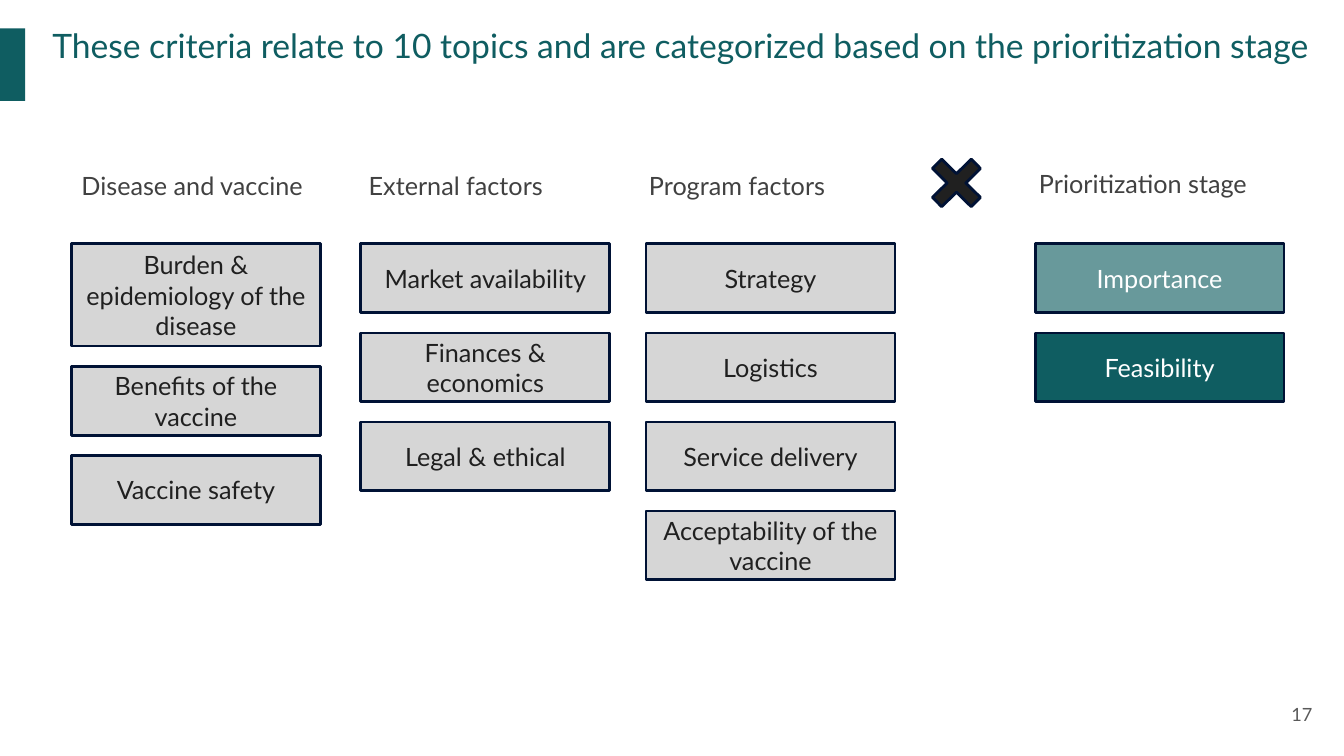
from pptx import Presentation
from pptx.dml.color import RGBColor
from pptx.enum.shapes import MSO_SHAPE
from pptx.enum.text import MSO_ANCHOR, PP_ALIGN
from pptx.util import Pt

TITLE = "These criteria relate to 10 topics and are categorized based on the prioritization stage"
PAGE = "17"
COLORS = {
    "teal": "0F5D61", "light_teal": "68999B", "gray": "D6D6D6", "navy": "001235",
    "ink": "202020", "heading": "414141", "page": "595959", "white": "FFFFFF",
}
TOPIC_COLUMNS = [
    ("Disease and vaccine", (51.1, 118.1, 188), PP_ALIGN.LEFT, 51.1,
     ["Burden & epidemiology of the disease", "Benefits of the vaccine", "Vaccine safety"]),
    ("External factors", (256.3, 118.1, 188), PP_ALIGN.LEFT, 257.8,
     ["Market availability", "Finances & economics", "Legal & ethical"]),
    ("Program factors", (456.5, 118.1, 188), PP_ALIGN.LEFT, 461.5,
     ["Strategy", "Logistics", "Service delivery", "Acceptability of the vaccine"]),
    ("Prioritization stage", (716.4, 116.6, 200), PP_ALIGN.CENTER, 739.4,
     ["Importance", "Feasibility"]),
]
STAGE_FILLS = {"Importance": "light_teal", "Feasibility": "teal"}
TALL_BOXES = {"Burden & epidemiology of the disease": 73}
BOX_TOP, BOX_W, BOX_H, BOX_GAP = 174.2, 177.8, 49, 14.6


def rgb(name):
    return RGBColor.from_string(COLORS[name])


def write(sp, text, size, color, align, anchor, inset=None):
    tf = sp.text_frame
    tf.text = text
    tf.word_wrap = True
    tf.vertical_anchor = anchor
    if inset is not None:
        tf.margin_left = tf.margin_right = tf.margin_top = tf.margin_bottom = Pt(inset)
    p = tf.paragraphs[0]
    p.alignment = align
    font = p.runs[0].font
    font.name, font.size, font.color.rgb = "Lato", Pt(size), rgb(color)


def add_text(s, box, *style):
    sp = s.shapes.add_textbox(*map(Pt, box))
    write(sp, *style)


def add_figure(s, kind, box, fill, line=None):
    sp = s.shapes.add_shape(kind, *map(Pt, box))
    sp.shadow.inherit = False
    sp.fill.solid()
    sp.fill.fore_color.rgb = rgb(fill)
    if line:
        sp.line.color.rgb = rgb(line)
        sp.line.width = Pt(2)
    else:
        sp.line.fill.background()
    return sp


def add_column(s, heading, place, align, left, topics):
    add_text(s, (*place, 35), heading, 18, "heading", align, MSO_ANCHOR.TOP)
    top = BOX_TOP
    for topic in topics:
        height = TALL_BOXES.get(topic, BOX_H)
        fill = STAGE_FILLS.get(topic, "gray")
        color = "white" if topic in STAGE_FILLS else "ink"
        sp = add_figure(s, MSO_SHAPE.RECTANGLE, (left, top, BOX_W, height), fill, "navy")
        write(sp, topic, 18, color, PP_ALIGN.CENTER, MSO_ANCHOR.MIDDLE)
        top += height + BOX_GAP


def main():
    prs = Presentation()
    prs.slide_width, prs.slide_height = Pt(960), Pt(540)
    s = prs.slides.add_slide(prs.slide_layouts[6])
    add_figure(s, MSO_SHAPE.RECTANGLE, (-0.7, 20.2, 18.7, 51.8), "teal")
    add_text(s, (37.4, 18, 903.6, 57.6), TITLE, 24, "teal", PP_ALIGN.LEFT, MSO_ANCHOR.TOP, 0)
    add_text(s, (889.2, 489.6, 57.6, 41), PAGE, 13, "page", PP_ALIGN.RIGHT, MSO_ANCHOR.MIDDLE, 9.4)
    for column in TOPIC_COLUMNS:
        add_column(s, *column)
    cross = add_figure(s, MSO_SHAPE.MATH_MULTIPLY, (656.6, 104.4, 53.3, 52.6), "ink", "navy")
    cross.adjustments[0] = 0.178
    prs.save("out.pptx")


if __name__ == "__main__":
    main()
